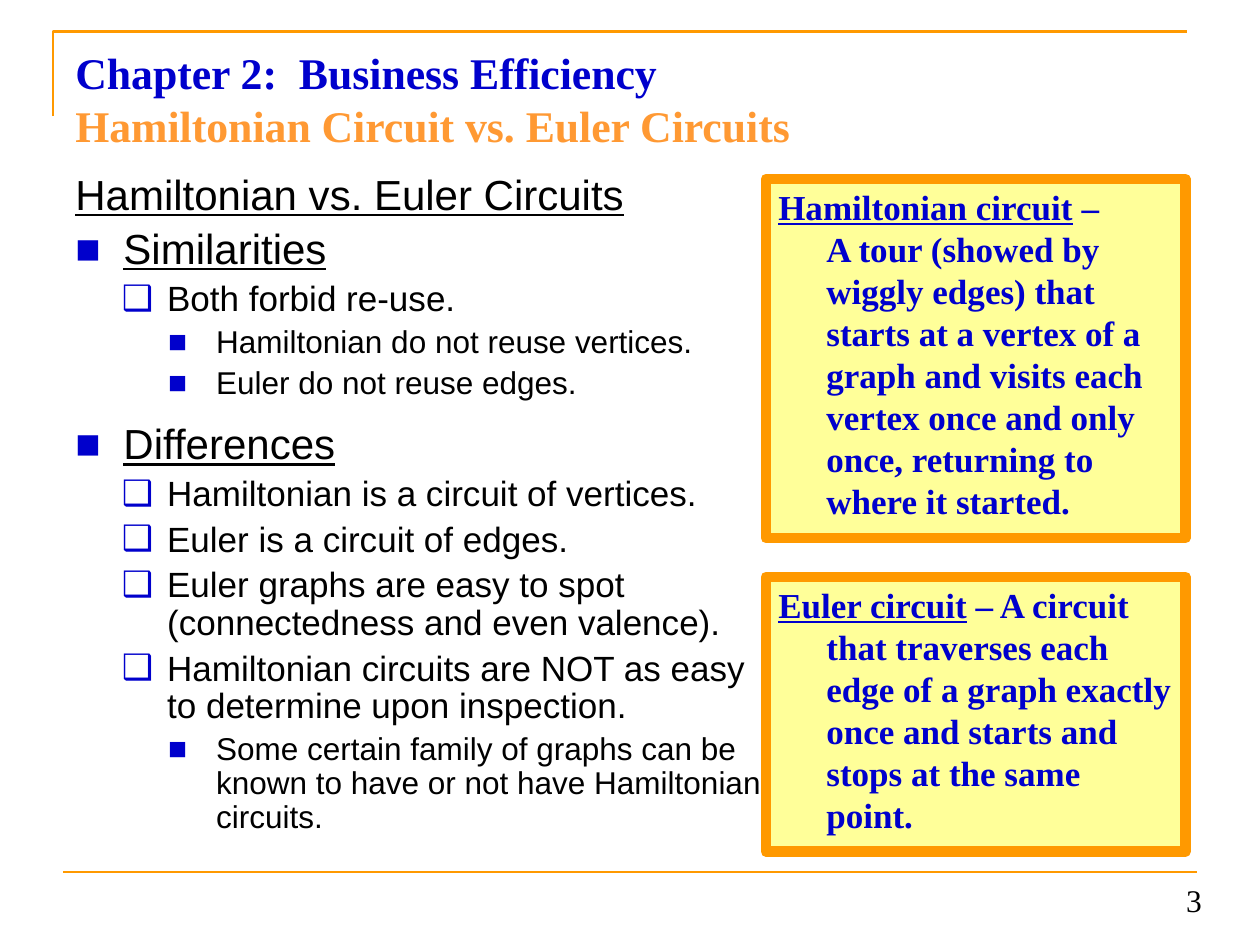
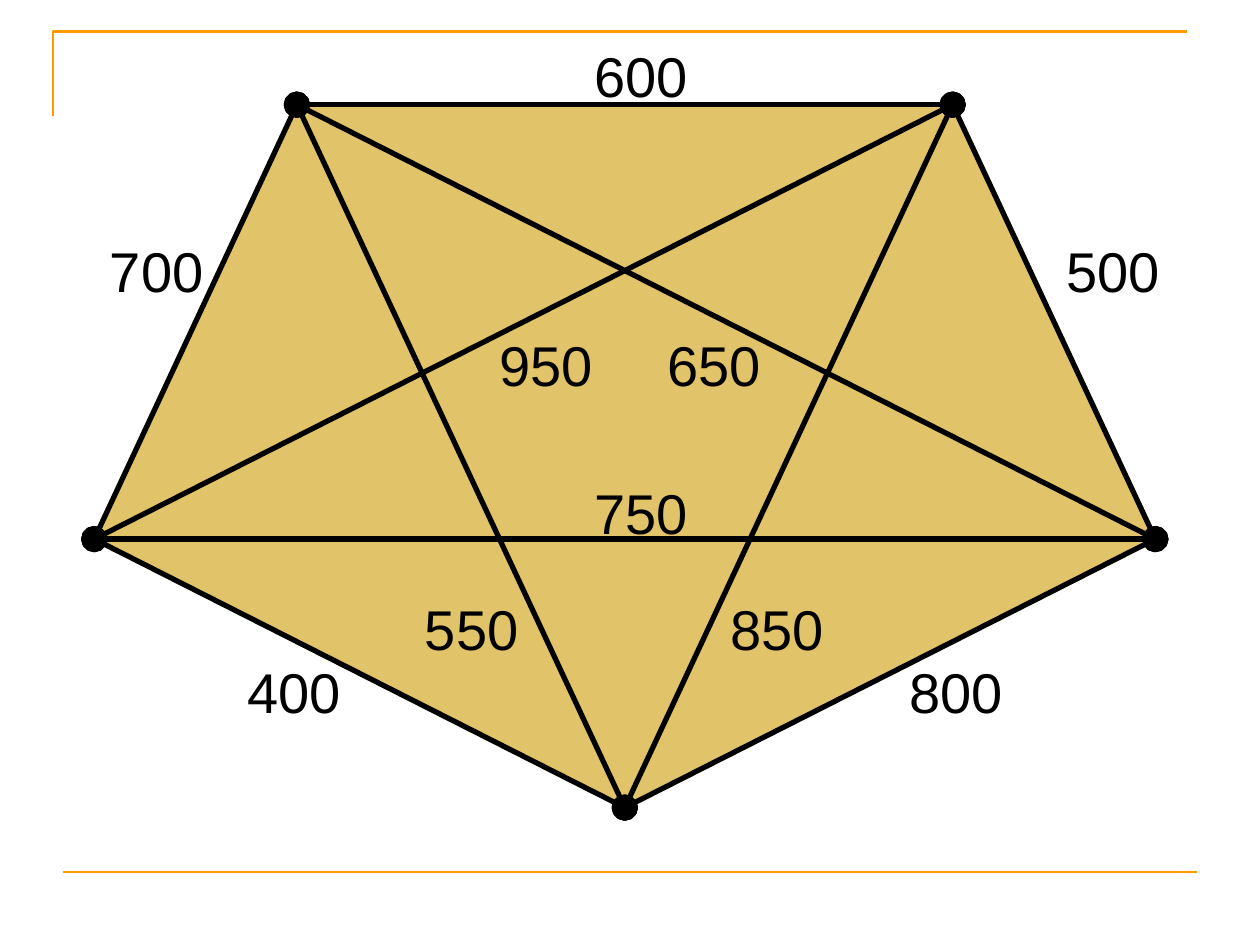
from lxml.etree import SubElement as Sub
from pptx import Presentation
from pptx.dml.color import RGBColor
from pptx.enum.shapes import MSO_CONNECTOR as Conn, MSO_SHAPE as Kind
from pptx.enum.text import MSO_ANCHOR as Anchor, PP_ALIGN as Align
from pptx.oxml.ns import qn
from pptx.util import Cm, Pt

ORANGE = RGBColor(0xFF, 0x99, 0x00)
PEACH = RGBColor(0xFF, 0x99, 0x33)
BLUE = RGBColor(0x00, 0x00, 0xCC)
CREAM = RGBColor(0xFF, 0xFF, 0x99)
GOLD = RGBColor(0xCC, 0x99, 0x00)
BLACK = RGBColor(0x00, 0x00, 0x00)
SANS, SERIF = "Arial", "Times New Roman"

# Outline styles: bullet, left margin and hanging indent in cm, size, underline
STYLES = {
    "lead": (None, 0.97, 0.97, 24, True),
    "head": ("■", 0.97, 0.97, 24, True),
    "point": ("❑", 1.85, 0.91, 20, False),
    "detail": ("■", 2.84, 0.97, 18, False),
}
OUTLINE = [
    ("lead", "Hamiltonian vs. Euler Circuits"),
    ("head", "Similarities"),
    ("point", "Both forbid re-use."),
    ("detail", "Hamiltonian do not reuse vertices."),
    ("detail", "Euler do not reuse edges."),
    ("head", "Differences"),
    ("point", "Hamiltonian is a circuit of vertices."),
    ("point", "Euler is a circuit of edges."),
    ("point", "Euler graphs are easy to spot (connectedness and even valence)."),
    ("point", "Hamiltonian circuits are NOT as easy to determine upon inspection."),
    ("detail", "Some certain family of graphs can be known to have or not have "
               "Hamiltonian circuits."),
]

# Corners as shares of the pentagon's box, clockwise from top left
CORNERS = [(0.191, 0), (0.809, 0), (1, 0.618), (0.5, 1), (0, 0.618)]
# Edges: two corners, weight, centre of its label from the box's corner in cm
EDGES = [
    (0, 3, "550", 7.61, 10.56),
    (4, 1, "950", 9.11, 5.25),
    (0, 4, "700", 1.26, 3.35),
    (0, 2, "650", 12.49, 5.25),
    (0, 1, "600", 11.02, -0.59),
    (4, 3, "400", 4.03, 11.83),
    (4, 2, "750", 11.02, 8.23),
    (2, 3, "800", 17.37, 11.83),
    (1, 2, "500", 20.54, 3.35),
    (1, 3, "850", 13.76, 10.56),
]


def set_font(font, name, size, color, bold=False):
    font.name, font.size, font.bold = name, Pt(size), bold
    font.color.rgb = color


def set_indent(para, margin, hang):
    props = para._p.get_or_add_pPr()
    props.set("marL", str(Cm(margin)))
    props.set("indent", str(-Cm(hang)))
    return props


def add_text(slide, box, anchor=Anchor.TOP):
    frame = slide.shapes.add_textbox(*map(Cm, box)).text_frame
    frame.word_wrap = True
    frame.vertical_anchor = anchor
    return frame


def add_line(slide, start, end, color, width, dots=False):
    line = slide.shapes.add_connector(
        Conn.STRAIGHT, *map(Cm, (*start, *end)))
    line.line.color.rgb = color
    line.line.width = Pt(width)
    props = line.element.spPr
    if dots:
        for tag in ("a:headEnd", "a:tailEnd"):
            Sub(props.find(qn("a:ln")), qn(tag), type="oval", w="lg", len="lg")
    Sub(props, qn("a:effectLst"))


def add_frame(slide):
    """Draw the corner rule and the footer rule."""
    pen = slide.shapes.build_freeform(Cm(1.07), Cm(2.34), scale=1.0)
    pen.add_line_segments(
        [(Cm(1.07), Cm(0.64)), (Cm(23.93), Cm(0.64))], close=False)
    rule = pen.convert_to_shape()
    rule.shadow.inherit = False
    rule.fill.background()
    rule.line.color.rgb = ORANGE
    rule.line.width = Pt(1.5)
    add_line(slide, (1.27, 17.58), (24.13, 17.58), ORANGE, 1.5)


def add_title(slide, box, chapter, topic):
    frame = add_text(slide, box, Anchor.BOTTOM)
    for para, text, color in ((frame.paragraphs[0], chapter, BLUE),
                              (frame.add_paragraph(), topic, PEACH)):
        para.text = text
        set_font(para.font, SERIF, 25, color, True)


def add_number(slide, box, number):
    para = add_text(slide, box, Anchor.MIDDLE).paragraphs[0]
    para.text = number
    para.alignment = Align.RIGHT
    set_font(para.font, SERIF, 18, BLACK)


def add_outline(slide, box, items):
    frame = add_text(slide, box)
    last = None
    for style, text in items:
        mark, margin, hang, size, under = STYLES[style]
        para = frame.add_paragraph() if last else frame.paragraphs[0]
        para.text = text
        props = set_indent(para, margin, hang)
        if mark:
            Sub(Sub(props, qn("a:buClr")), qn("a:srgbClr"), val=str(BLUE))
            Sub(props, qn("a:buFont"), typeface=SANS)
            Sub(props, qn("a:buChar"), char=mark)
        para.line_spacing = 0.9
        if last:
            gap = 7.5 if last == "detail" else 0
            para.space_before = Pt(0.22 * size + gap * (style == "head"))
        set_font(para.font, SANS, size, BLACK)
        para.font.underline = under
        last = style


def add_card(slide, box, term, *lines):
    """Draw a framed definition whose term is underlined."""
    card = slide.shapes.add_shape(Kind.RECTANGLE, *map(Cm, box))
    card.shadow.inherit = False
    card.fill.solid()
    card.fill.fore_color.rgb = CREAM
    card.line.color.rgb = ORANGE
    card.line.width = Pt(6)
    frame = card.text_frame
    frame.word_wrap = True
    frame.vertical_anchor = Anchor.TOP
    para = frame.paragraphs[0]
    para.alignment = Align.LEFT
    set_indent(para, 0.97, 0.97)
    set_font(para.font, SERIF, 20, BLUE, True)
    name = para.add_run()
    name.text = term
    name.font.underline = True
    for i, line in enumerate(lines):
        if i:
            para.add_line_break()
        para.add_run().text = line
    for run in para.runs:
        run.font.color.rgb = BLUE


def add_graph(slide, box):
    left, top, width, height = box
    area = slide.shapes.add_shape(Kind.REGULAR_PENTAGON, *map(Cm, box))
    area.rotation = 180
    area.shadow.inherit = False
    area.fill.solid()
    area.fill.fore_color.rgb = GOLD
    Sub(area.element.find(".//" + qn("a:srgbClr")), qn("a:alpha"), val="59000")
    area.line.color.rgb = GOLD
    area.line.width = Pt(0.75)

    dots = [(left + x * width, top + y * height) for x, y in CORNERS]
    for a, b, *_ in EDGES:
        add_line(slide, dots[a], dots[b], BLACK, 3, dots=True)
    wide, high = 5.92, 1.63
    for _, _, weight, x, y in EDGES:
        spot = (left + x - wide / 2, top + y - high / 2, wide, high)
        para = add_text(slide, spot).paragraphs[0]
        para.text = weight
        para.alignment = Align.CENTER
        set_font(para.font, SANS, 32, BLACK)


def new_slide(deck):
    slide = deck.slides.add_slide(deck.slide_layouts[6])
    add_frame(slide)
    return slide


def main():
    deck = Presentation()
    deck.slide_width, deck.slide_height = Cm(25.4), Cm(19.05)

    slide = new_slide(deck)
    add_outline(slide, (1.27, 3.38, 14.4, 13.97), OUTLINE)
    add_number(slide, (22.7, 17.6, 1.78, 1.1), "3")
    add_title(slide, (1.27, 0.76, 22.86, 2.41),
              "Chapter 2:  Business Efficiency",
              "Hamiltonian Circuit vs. Euler Circuits")
    add_card(slide, (15.44, 3.61, 8.46, 7.24), "Hamiltonian circuit", " –",
             "A tour (showed by wiggly edges) that starts at a vertex of a "
             "graph and visits each vertex once and only once, returning to "
             "where it started.")
    add_card(slide, (15.44, 11.63, 8.46, 5.54), "Euler circuit",
             " – A circuit that traverses each edge of a graph exactly once "
             "and starts and stops at the same point.")

    add_graph(new_slide(deck), (1.9, 2.11, 21.39, 14.17))
    deck.save("out.pptx")


if __name__ == "__main__":
    main()
